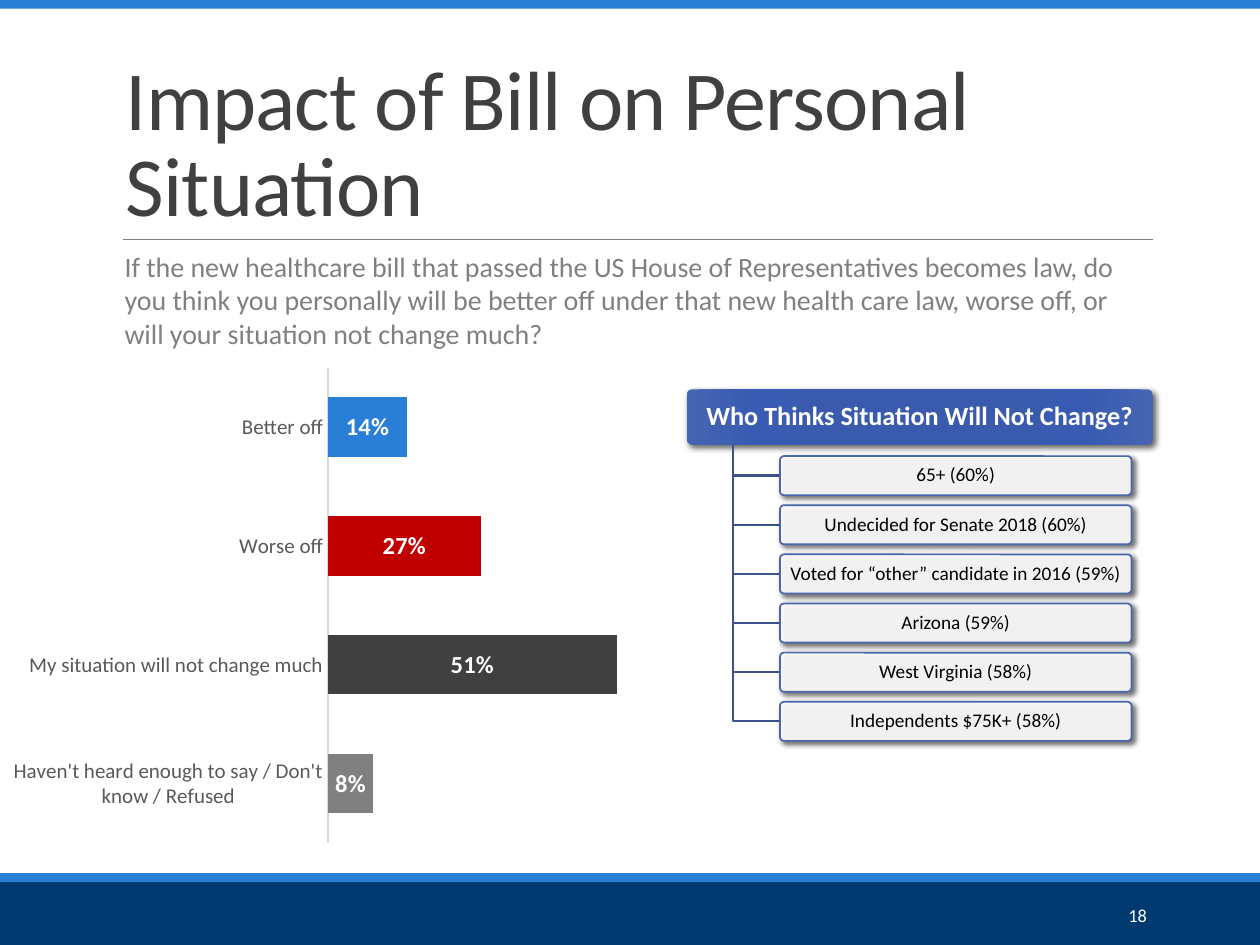
import dataclasses

import lxml.etree
import pptx
import pptx.chart.data
import pptx.dml.color
import pptx.enum.chart
import pptx.enum.shapes
import pptx.enum.text
import pptx.oxml.ns
import pptx.util

Inches = pptx.util.Inches
Pt = pptx.util.Pt
qn = pptx.oxml.ns.qn
Align = pptx.enum.text.PP_ALIGN
Anchor = pptx.enum.text.MSO_ANCHOR
Shapes = pptx.enum.shapes.MSO_SHAPE


@dataclasses.dataclass(frozen=True)
class Theme:
    """Colours and type sizes of the slide."""
    font: str = "Calibri"
    navy: str = "003A70"
    blue: str = "297FD5"
    red: str = "C00000"
    dark: str = "404040"
    grey: str = "808080"
    label: str = "595959"
    axis: str = "D9D9D9"
    white: str = "FFFFFF"
    black: str = "000000"
    branch: str = "3B528A"
    outline: str = "4A66AC"
    header_stops: tuple = ((0, "3759AE"), (34, "3A5BAD"), (70, "395BB2"), (100, "4564B1"))
    title_size: float = 48
    question_size: float = 16
    header_size: float = 15
    value_size: float = 14
    category_size: float = 12
    item_size: float = 11
    number_size: float = 10.5


THEME = Theme()
QUESTION = (
    "If the new healthcare bill that passed the US House of Representatives becomes law, "
    "do you think you personally will be better off under that new health care law, "
    "worse off, or will your situation not change much?"
)
ANSWERS = (
    ("Better off", 0.14, THEME.blue),
    ("Worse off", 0.27, THEME.red),
    ("My situation will not change much", 0.51, THEME.dark),
    ("Haven't heard enough to say / Don't know / Refused", 0.08, THEME.grey),
)
GROUPS = (
    "65+ (60%)",
    "Undecided for Senate 2018 (60%)",
    "Voted for “other” candidate in 2016 (59%)",
    "Arizona (59%)",
    "West Virginia (58%)",
    "Independents $75K+ (58%)",
)


def rgb(code):
    """Turn a hex code into a colour."""
    return pptx.dml.color.RGBColor.from_string(code)


def style_font(font, size, color, bold=False):
    """Set face, size, colour and weight of a font."""
    font.name, font.size, font.bold = THEME.font, Pt(size), bold
    font.color.rgb = rgb(color)


def write(shape, text, size, color, align=Align.LEFT, anchor=Anchor.TOP,
          spacing=None, margin=None, bold=False):
    """Write one wrapped paragraph into a shape."""
    frame = shape.text_frame
    frame.word_wrap = True
    frame.vertical_anchor = anchor
    if margin is not None:
        frame.margin_left = frame.margin_right = margin
        frame.margin_top = frame.margin_bottom = margin
    paragraph = frame.paragraphs[0]
    paragraph.text = text
    paragraph.alignment = align
    paragraph.line_spacing = spacing
    style_font(paragraph.font, size, color, bold)
    return paragraph


def add_band(slide, left, top, width, height, color):
    """Add a plain full-colour band."""
    band = slide.shapes.add_shape(Shapes.RECTANGLE, left, top, width, height)
    band.shadow.inherit = False
    band.fill.solid()
    band.fill.fore_color.rgb = rgb(color)
    band.line.fill.background()


def add_frame(slide, left, top, width, height):
    """Add the top stripe, the footer bands and the page number."""
    stripe, footer = Inches(0.07), Inches(0.5)
    footer_top = top + height - footer
    add_band(slide, left, footer_top, width, footer, THEME.navy)
    add_band(slide, left, footer_top - stripe, width, stripe, THEME.blue)
    add_band(slide, left, top, width, stripe, THEME.blue)
    number = slide.shapes.add_textbox(
        left + Inches(8.12), footer_top + Inches(0.06), Inches(1.08), Inches(0.4))
    write(number, "18", THEME.number_size, THEME.white, Align.RIGHT, Anchor.MIDDLE)


def add_heading(slide, left, top, width, height):
    """Add the title, the rule below it and the survey question."""
    title_height = Inches(1.59)
    rule_top = top + title_height
    title = slide.shapes.add_textbox(left, top, width, title_height)
    paragraph = write(title, "Impact of Bill on Personal Situation", THEME.title_size,
                      THEME.dark, anchor=Anchor.BOTTOM, spacing=0.85)
    paragraph.runs[0].font._element.set("spc", "-50")
    rule = slide.shapes.add_connector(
        pptx.enum.shapes.MSO_CONNECTOR.STRAIGHT,
        left + Inches(0.08), rule_top, left + width, rule_top)
    rule.line.color.rgb = rgb(THEME.grey)
    rule.line.width = Pt(0.5)
    lxml.etree.SubElement(rule._element.spPr, qn("a:effectLst"))
    question_top = rule_top + Inches(0.03)
    question = slide.shapes.add_textbox(
        left - Inches(0.01), question_top, width + Inches(0.06), top + height - question_top)
    write(question, QUESTION, THEME.question_size, THEME.grey)


def add_answer_chart(slide, left, top, width, height):
    """Add the bar chart of answers."""
    data = pptx.chart.data.CategoryChartData(number_format="0%")
    data.categories = [name for name, _, _ in ANSWERS]
    data.add_series("Series 1", [share for _, share, _ in ANSWERS])
    chart = slide.shapes.add_chart(
        pptx.enum.chart.XL_CHART_TYPE.BAR_CLUSTERED, left, top, width, height, data).chart
    chart.has_legend = chart.has_title = False
    style_font(chart.font, 10, THEME.black)

    answers, shares = chart.category_axis, chart.value_axis
    answers.reverse_order = True
    answers.major_tick_mark = pptx.enum.chart.XL_TICK_MARK.NONE
    answers.format.line.color.rgb = rgb(THEME.axis)
    answers.format.line.width = Pt(0.75)
    style_font(answers.tick_labels.font, THEME.category_size, THEME.label)
    shares.visible = shares.has_major_gridlines = False
    shares.minimum_scale, shares.maximum_scale = 0, 0.6

    plot = chart.plots[0]
    plot.gap_width, plot.vary_by_categories = 100, False
    bars = plot.series[0]
    bars.format.fill.solid()
    bars.format.fill.fore_color.rgb = rgb(THEME.outline)
    for index, (_, _, color) in enumerate(ANSWERS):
        fill = bars.points[index].format.fill
        fill.solid()
        fill.fore_color.rgb = rgb(color)
    labels = bars.data_labels
    labels.show_value = True
    labels.number_format, labels.number_format_is_linked = "0%", False
    labels.position = pptx.enum.chart.XL_LABEL_POSITION.CENTER
    style_font(labels.font, THEME.value_size, THEME.white, True)


def add_alpha(color, percent):
    """Give a colour element an opacity."""
    lxml.etree.SubElement(color, qn("a:alpha"), val=str(percent * 1000))


def add_card(group, left, top, width, height, blur):
    """Add a rounded white card with a soft shadow."""
    card = group.shapes.add_shape(Shapes.ROUNDED_RECTANGLE, left, top, width, height)
    card.adjustments[0] = 0.1
    card.fill.solid()
    card.fill.fore_color.rgb = rgb(THEME.white)
    card.shadow.inherit = False
    shadow = lxml.etree.SubElement(
        card._element.spPr.find(qn("a:effectLst")), qn("a:outerShdw"),
        blurRad=str(Pt(blur)), dist=str(Pt(2)), dir="2700000", algn="tl", rotWithShape="0")
    add_alpha(lxml.etree.SubElement(shadow, qn("a:srgbClr"), val=THEME.black), 60)
    return card


def fill_radial(shape, stops):
    """Replace a solid fill by a radial gradient."""
    solid = shape._element.spPr.find(qn("a:solidFill"))
    gradient = lxml.etree.Element(qn("a:gradFill"), rotWithShape="1")
    stop_list = lxml.etree.SubElement(gradient, qn("a:gsLst"))
    for place, color in stops:
        stop = lxml.etree.SubElement(stop_list, qn("a:gs"), pos=str(place * 1000))
        lxml.etree.SubElement(stop, qn("a:srgbClr"), val=color)
    path = lxml.etree.SubElement(gradient, qn("a:path"), path="circle")
    lxml.etree.SubElement(path, qn("a:fillToRect"), dict.fromkeys("ltrb", "100000"))
    solid.getparent().replace(solid, gradient)


def add_group_tree(slide, left, top, width):
    """Add the header and the voter groups that branch from it."""
    tree = slide.shapes.add_group_shape()
    header_height, item_height, pitch = Inches(0.44), Inches(0.31), Inches(0.39)
    trunk, item_left = left + Inches(0.37), left + Inches(0.74)
    header_bottom = top + header_height
    header = add_card(tree, left, top, width, header_height, 3.5)
    fill_radial(header, THEME.header_stops)
    header.line.fill.background()
    write(header, "Who Thinks Situation Will Not Change?", THEME.header_size, THEME.white,
          Align.CENTER, Anchor.MIDDLE, 0.9, Inches(0.03), True)
    for index, text in enumerate(GROUPS):
        item_top = header_bottom + Inches(0.09) + index * pitch
        middle = item_top + item_height // 2
        outline = tree.shapes.build_freeform(trunk, header_bottom)
        outline.add_line_segments([(trunk, middle), (item_left, middle)], close=False)
        branch = outline.convert_to_shape()
        branch.shadow.inherit = False
        branch.fill.background()
        branch.line.color.rgb = rgb(THEME.branch)
        branch.line.width = Pt(1.25)
        item = add_card(tree, item_left, item_top, Inches(2.79), item_height, 3)
        add_alpha(item._element.spPr.find(qn("a:solidFill"))[0], 90)
        item.line.color.rgb = rgb(THEME.outline)
        item.line.width = Pt(1)
        write(item, text, THEME.item_size, THEME.black,
              Align.CENTER, Anchor.MIDDLE, 0.9, Inches(0.02))


def main():
    """Build and save the slide."""
    deck = pptx.Presentation()
    deck.slide_width, deck.slide_height = Inches(10), Inches(7.5)
    slide = deck.slides.add_slide(deck.slide_layouts[6])
    add_frame(slide, 0, 0, deck.slide_width, deck.slide_height)
    add_heading(slide, Inches(0.9), Inches(0.31), Inches(8.25), Inches(2.53))
    add_answer_chart(slide, 0, Inches(2.84), Inches(5.41), Inches(3.93))
    add_group_tree(slide, Inches(5.45), Inches(3.09), Inches(3.7))
    deck.save("out.pptx")


if __name__ == "__main__":
    main()
